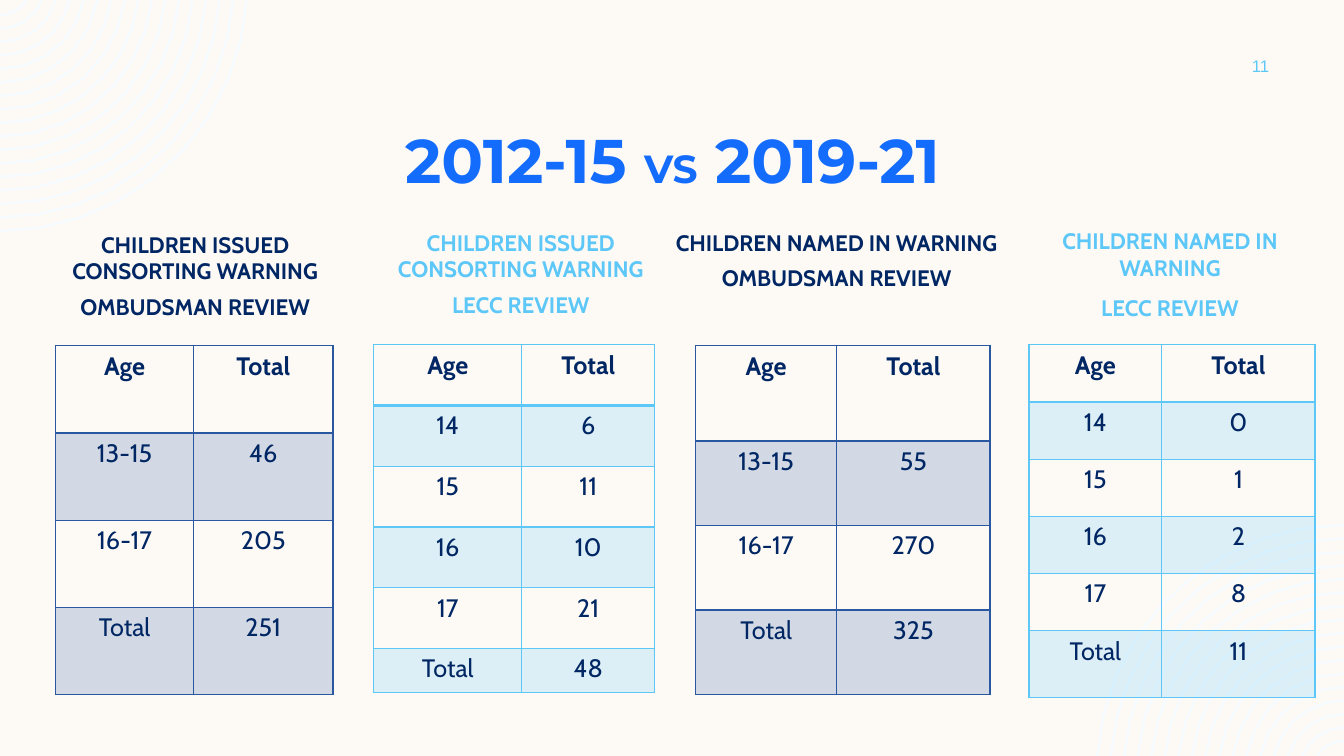
import math

import lxml.etree
import pptx
import pptx.dml.color
import pptx.enum.text
import pptx.oxml.ns
import pptx.util

Cm = pptx.util.Cm
Pt = pptx.util.Pt
RGBColor = pptx.dml.color.RGBColor
ALIGN = pptx.enum.text.PP_ALIGN
ANCHOR = pptx.enum.text.MSO_ANCHOR
qn = pptx.oxml.ns.qn

CREAM = RGBColor(0xFD, 0xFA, 0xF6)
PALE = RGBColor(0xF5, 0xFB, 0xFF)
BLUE = RGBColor(0x14, 0x6C, 0xFD)
NAVY = RGBColor(0x00, 0x26, 0x64)
MID = RGBColor(0x29, 0x58, 0xA0)
SKY = RGBColor(0x5D, 0xC7, 0xF8)

WIDTH, HEIGHT = 33.87, 19.05
ISSUED = "CHILDREN ISSUED CONSORTING WARNING"
NAMED = "CHILDREN NAMED IN WARNING"
OMBUDSMAN = "OMBUDSMAN REVIEW"
LECC = "LECC REVIEW"

# Lengths in cm: label (left, top, width, height), table (left, top)
PANELS = [
    dict(label=(0.69, 5.69, 8.46, 2.51), heading=ISSUED, review=OMBUDSMAN,
         label_color=NAVY, table=(1.4, 8.71), cols=[3.48, 3.51],
         heights=[2.2] * 4, line=MID,
         data=[("13-15", "46"), ("16-17", "205"), ("Total", "251")]),
    dict(label=(8.86, 5.64, 8.53, 2.51), heading=ISSUED, review=LECC,
         label_color=SKY, table=(9.42, 8.69), cols=[3.73, 3.35],
         heights=[1.53] * 5 + [1.12], line=SKY,
         data=[("14", "6"), ("15", "11"), ("16", "10"), ("17", "21"),
               ("Total", "48")]),
    dict(label=(16.59, 5.64, 8.99, 2.74), heading=NAMED, review=OMBUDSMAN,
         label_color=NAVY, table=(17.53, 8.71), cols=[3.56, 3.86],
         heights=[2.4] + [2.13] * 3, line=MID,
         data=[("13-15", "55"), ("16-17", "270"), ("Total", "325")]),
    dict(label=(25.65, 5.59, 7.67, 2.57), heading=NAMED, review=LECC,
         label_color=SKY, table=(25.93, 8.69), cols=[3.35, 3.86],
         heights=[1.44] * 5 + [1.68], line=SKY, review_gap=3.6,
         data=[("14", "0"), ("15", "1"), ("16", "2"), ("17", "8"),
               ("Total", "11")]),
]


def add_run(p, text, font, size, color, bold=False):
    r = p.add_run()
    r.text = text
    r.font.name = font
    r.font.size = Pt(size)
    r.font.bold = bold
    r.font.color.rgb = color


def add_text_frame(s, box, anchor=ANCHOR.TOP):
    tf = s.shapes.add_textbox(*map(Cm, box)).text_frame
    tf.word_wrap = True
    tf.vertical_anchor = anchor
    tf.paragraphs[0].alignment = ALIGN.CENTER
    return tf


def arc_points(radius, drop, corner, direction):
    """Points of an arc whose centre lies `drop` beyond the corner."""
    steps = 3 + round(radius)
    start = math.asin(drop / radius)
    points = []
    for i in range(steps + 1):
        angle = start + (math.pi / 2 - start) * i / steps
        x = corner[0] + direction * radius * math.cos(angle)
        y = corner[1] + direction * (radius * math.sin(angle) - drop)
        points.append((Cm(x), Cm(y)))
    return points


def add_corner_rings(s, corner, direction):
    arcs = [arc_points(6.23 - 0.34 * i, 0.41, corner, direction)
            for i in range(17)]
    builder = s.shapes.build_freeform(*arcs[0][0])
    builder.add_line_segments(arcs[0][1:], close=False)
    for points in arcs[1:]:
        builder.move_to(*points[0])
        builder.add_line_segments(points[1:], close=False)
    sp = builder.convert_to_shape()
    sp.shadow.inherit = False
    sp.fill.background()
    sp.line.color.rgb = PALE
    sp.line.width = Cm(0.06)


def add_title(s, box):
    p = add_text_frame(s, box, ANCHOR.MIDDLE).paragraphs[0]
    p.line_spacing = Pt(48.8)
    for text, size in (("2012-15 ", 44), ("VS", 28), (" 2019-21", 44)):
        add_run(p, text, "Montserrat", size, BLUE, True)


def add_page_number(s, box):
    p = add_text_frame(s, box, ANCHOR.MIDDLE).paragraphs[0]
    add_run(p, "11", "Arial", 12, SKY)


def set_borders(cell, color, widths):
    """Draw cell borders; widths are points by side L, R, T, B."""
    tcPr = cell._tc.get_or_add_tcPr()
    for side, width in zip("LRTB", widths):
        ln = lxml.etree.SubElement(tcPr, qn("a:ln" + side), w=str(Pt(width)))
        fill = lxml.etree.SubElement(ln, qn("a:solidFill"))
        lxml.etree.SubElement(fill, qn("a:srgbClr"), val=str(color))


def set_tint(cell, color):
    """Fill the cell with the colour at 20 % opacity."""
    cell.fill.solid()
    cell.fill.fore_color.rgb = color
    clr = cell._tc.tcPr.find(qn("a:solidFill")).find(qn("a:srgbClr"))
    lxml.etree.SubElement(clr, qn("a:alpha"), val="20000")


def add_age_table(s, left, top, cols, heights, line, data):
    table = s.shapes.add_table(len(heights), len(cols), Cm(left), Cm(top),
                               Cm(sum(cols)), Cm(sum(heights))).table
    table.horz_banding = False
    for column, width in zip(table.columns, cols):
        column.width = Cm(width)
    for i, values in enumerate([("Age", "Total")] + data):
        table.rows[i].height = Cm(heights[i])
        for j, value in enumerate(values):
            cell = table.cell(i, j)
            set_borders(cell, line, (1, 1, 2 if i == 1 else 1,
                                     2 if i == 0 else 1))
            if i % 2:
                set_tint(cell, line)
            else:
                cell.fill.background()
            p = cell.text_frame.paragraphs[0]
            p.alignment = ALIGN.CENTER
            add_run(p, value, "Cabin", 18, NAVY, i == 0)


def add_panel(s, label, heading, review, label_color, table, cols, heights,
              line, data, review_gap=0):
    tf = add_text_frame(s, label)
    p = tf.paragraphs[0]
    p.space_after = Pt(6)
    add_run(p, heading, "Cabin", 16, label_color, True)
    p = tf.add_paragraph()
    p.alignment = ALIGN.CENTER
    p.space_before = Pt(review_gap)
    add_run(p, review, "Cabin", 16, label_color, True)
    add_age_table(s, *table, cols, heights, line, data)


def main():
    prs = pptx.Presentation()
    prs.slide_width, prs.slide_height = Cm(WIDTH), Cm(HEIGHT)
    s = prs.slides.add_slide(prs.slide_layouts[6])
    s.background.fill.solid()
    s.background.fill.fore_color.rgb = CREAM
    add_corner_rings(s, (0, 0), 1)
    add_corner_rings(s, (WIDTH, HEIGHT), -1)
    add_title(s, (2.13, 3, 29.64, 2.13))
    add_page_number(s, (30.4, 1.27, 2.74, 0.76))
    for panel in PANELS:
        add_panel(s, **panel)
    prs.save("out.pptx")


if __name__ == "__main__":
    main()
